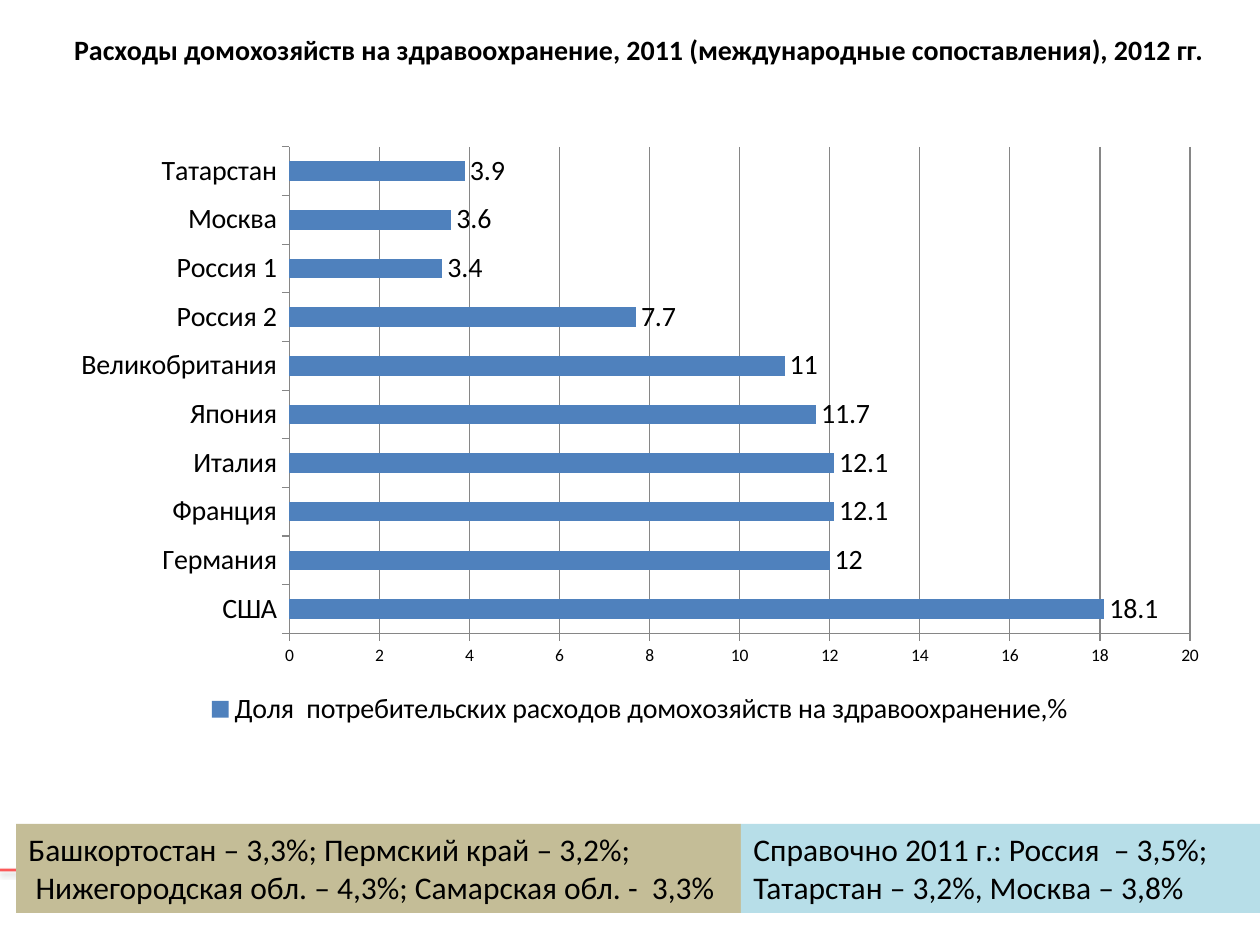
from lxml.etree import SubElement
from pptx import Presentation
from pptx.chart.data import CategoryChartData
from pptx.dml.color import RGBColor
from pptx.enum.chart import XL_CHART_TYPE, XL_LABEL_POSITION, XL_LEGEND_POSITION, XL_TICK_MARK
from pptx.enum.shapes import MSO_CONNECTOR, MSO_SHAPE
from pptx.enum.text import MSO_ANCHOR, MSO_AUTO_SIZE, PP_ALIGN
from pptx.oxml.ns import qn
from pptx.util import Emu, Pt

PX_PER_INCH = 126
EMU_PER_PX = 914400 / PX_PER_INCH
FONT = "Calibri"
COLORS = {
    "text": "000000",
    "rule": "FF0000",
    "sand": "C4BD97",
    "sky": "B7DEE8",
    "bar": "4F81BD",
    "axis": "868686",
}

SPENDING = {
    "США": 18.1,
    "Германия": 12,
    "Франция": 12.1,
    "Италия": 12.1,
    "Япония": 11.7,
    "Великобритания": 11,
    "Россия 2": 7.7,
    "Россия 1": 3.4,
    "Москва": 3.6,
    "Татарстан": 3.9,
}


def px(length):
    return Emu(round(length * EMU_PER_PX))


def color(name):
    return RGBColor.from_string(COLORS[name])


class SlideBuilder:
    def __init__(self, page):
        self.page = page

    def style_font(self, font, size, bold=False):
        font.name = FONT
        font.size = Pt(size)
        font.bold = bold
        font.color.rgb = color("text")

    def fill_text(self, shape, lines, size, align, bold=False):
        frame = shape.text_frame
        frame.word_wrap = True
        frame.auto_size = MSO_AUTO_SIZE.SHAPE_TO_FIT_TEXT
        frame.vertical_anchor = MSO_ANCHOR.TOP
        frame.text = "\n".join(lines)
        for paragraph in frame.paragraphs:
            paragraph.alignment = align
            self.style_font(paragraph.font, size, bold)

    def heading(self, text, left, top, width, height):
        box = self.page.shapes.add_textbox(px(left), px(top), px(width), px(height))
        self.fill_text(box, [text], 16, PP_ALIGN.CENTER, bold=True)

    def panel(self, lines, fill, left, top, width, height):
        box = self.page.shapes.add_shape(
            MSO_SHAPE.RECTANGLE, px(left), px(top), px(width), px(height))
        box.shadow.inherit = False
        box.fill.solid()
        box.fill.fore_color.rgb = color(fill)
        box.line.fill.background()
        self.fill_text(box, lines, 18, PP_ALIGN.LEFT)

    def rule(self, top, width):
        """Draw a translucent line across the page with a soft shadow below."""
        line = self.page.shapes.add_connector(
            MSO_CONNECTOR.STRAIGHT, 0, px(top), px(width), px(top))
        line.line.width = Pt(1.5)
        line.line.color.rgb = color("rule")
        properties = line._element.spPr
        stroke = properties.find(".//" + qn("a:srgbClr"))
        SubElement(stroke, qn("a:alpha"), val="64000")
        effects = SubElement(properties, qn("a:effectLst"))
        shadow = SubElement(
            effects, qn("a:outerShdw"), blurRad=str(Pt(3.1)), dist=str(Pt(1.6)),
            dir="5400000", rotWithShape="0")
        tint = SubElement(shadow, qn("a:srgbClr"), val=COLORS["text"])
        SubElement(tint, qn("a:alpha"), val="38000")

    def bar_chart(self, name, values, left, top, width, height):
        data = CategoryChartData()
        data.categories = list(values)
        data.add_series(name, list(values.values()))
        chart = self.page.shapes.add_chart(
            XL_CHART_TYPE.BAR_CLUSTERED, px(left), px(top), px(width), px(height), data).chart
        self.style_font(chart.font, 10)
        chart.has_title = False
        chart.has_legend = True
        chart.legend.position = XL_LEGEND_POSITION.BOTTOM
        chart.legend.include_in_layout = False
        self.style_font(chart.legend.font, 16)

        for axis, size in ((chart.category_axis, 16), (chart.value_axis, 10)):
            axis.major_tick_mark = XL_TICK_MARK.OUTSIDE
            axis.minor_tick_mark = XL_TICK_MARK.NONE
            axis.format.line.color.rgb = color("axis")
            self.style_font(axis.tick_labels.font, size)
        chart.category_axis.has_major_gridlines = False
        scale = chart.value_axis
        scale.minimum_scale, scale.maximum_scale, scale.major_unit = 0, 20, 2
        scale.has_major_gridlines = True
        scale.major_gridlines.format.line.color.rgb = color("axis")

        plot = chart.plots[0]
        plot.vary_by_categories = False
        plot.gap_width = 150
        series = plot.series[0]
        series.format.fill.solid()
        series.format.fill.fore_color.rgb = color("bar")
        labels = series.data_labels
        labels.show_value = True
        labels.position = XL_LABEL_POSITION.OUTSIDE_END
        self.style_font(labels.font, 16)


def main():
    deck = Presentation()
    deck.slide_width, deck.slide_height = px(1260), px(945)
    builder = SlideBuilder(deck.slides.add_slide(deck.slide_layouts[6]))

    builder.rule(870, 1260)
    builder.heading(
        "Расходы домохозяйств на здравоохранение, 2011 (международные сопоставления), 2012 гг.",
        44, 26, 1190, 47)
    builder.panel(
        ["Башкортостан – 3,3%; Пермский край – 3,2%;",
         " Нижегородская обл. – 4,3%; Самарская обл. -  3,3%"],
        "sand", 16, 824, 725, 89)
    builder.panel(
        ["Справочно 2011 г.: Россия  – 3,5%;",
         "Татарстан – 3,2%, Москва – 3,8%"],
        "sky", 741, 824, 519, 89)
    builder.bar_chart(
        "Доля  потребительских расходов домохозяйств на здравоохранение,%",
        SPENDING, 58, 135, 1164, 597)
    deck.save("out.pptx")


if __name__ == "__main__":
    main()
